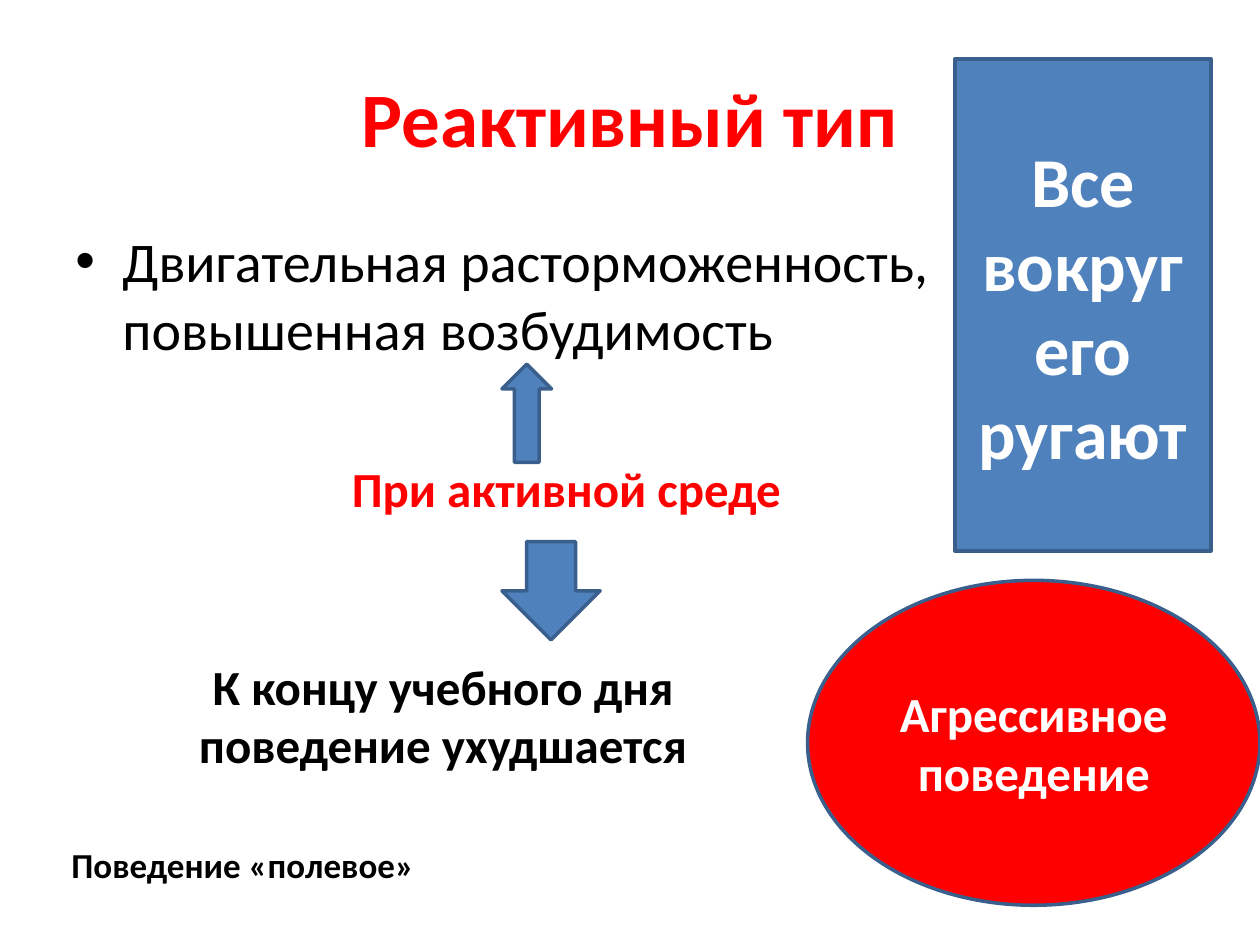
from pptx import Presentation
from pptx import util as u
from pptx.dml.color import RGBColor
from pptx.enum import shapes, text
from pptx.oxml.ns import qn
from lxml import etree

KIND = shapes.MSO_SHAPE
MID = text.MSO_ANCHOR.MIDDLE
TOP = text.MSO_ANCHOR.TOP
LEFT = text.PP_ALIGN.LEFT
CENTER = text.PP_ALIGN.CENTER

BLUE, EDGE, RED = "4F81BD", "3A5F8C", "FF0000"
BLACK, WHITE = "000000", "FFFFFF"


def color(code):
    return RGBColor.from_string(code)


class Page:
    """Holds the style and the current slide."""

    font = {"name": "Calibri", "bold": True}

    def __init__(self, slide):
        self.slide = slide

    def fill_text(self, shape, words, size, ink, align=CENTER, anchor=TOP, **extra):
        frame = shape.text_frame
        frame.word_wrap = True
        frame.vertical_anchor = anchor
        par = frame.paragraphs[0]
        par.alignment = align
        run = par.add_run()
        run.text = words
        style = {**self.font, "size": u.Pt(size), **extra}
        for key, value in style.items():
            setattr(run.font, key, value)
        run.font.color.rgb = color(ink)
        return par

    def label(self, box, words, size, ink=BLACK, **extra):
        shape = self.slide.shapes.add_textbox(*map(u.Cm, box))
        return self.fill_text(shape, words, size, ink, **extra)

    def bullet(self, box, words, size):
        par = self.label(box, words, size, align=LEFT, bold=False)
        props = par._p.get_or_add_pPr()
        indent = u.Cm(0.95)
        props.set("marL", str(indent))
        props.set("indent", str(-indent))
        space = etree.SubElement(props, qn("a:spcBef"))
        etree.SubElement(space, qn("a:spcPct"), val="20000")
        etree.SubElement(props, qn("a:buFont"), typeface="Arial")
        etree.SubElement(props, qn("a:buChar"), char="•")

    def block(self, kind, box, fill=BLUE, words=None, size=28):
        shape = self.slide.shapes.add_shape(kind, *map(u.Cm, box))
        shape.shadow.inherit = False
        shape.fill.solid()
        shape.fill.fore_color.rgb = color(fill)
        shape.line.color.rgb = color(EDGE)
        shape.line.width = u.Pt(2)
        if words:
            self.fill_text(shape, words, size, WHITE, anchor=MID)


def main():
    deck = Presentation()
    deck.slide_width, deck.slide_height = u.Cm(25.4), u.Cm(19.05)
    page = Page(deck.slides.add_slide(deck.slide_layouts[6]))

    # Title and main trait
    page.label((1.27, 0.76, 22.86, 3.18), "Реактивный тип", 44, RED, anchor=MID)
    page.bullet((1.27, 4.45, 22.86, 12.57),
                "Двигательная расторможенность, повышенная возбудимость", 32)

    # Setting, with an arrow to each outcome
    page.block(KIND.UP_ARROW, (10.12, 7.34, 1, 1.98))
    page.label((3.58, 9.12, 15.67, 1.45), "При активной среде", 28, RED)
    page.block(KIND.DOWN_ARROW, (10.12, 10.92, 1.98, 1.98))
    page.label((1.98, 13.1, 13.9, 2.64),
               "К концу учебного дня поведение ухудшается", 28)

    # Reaction of others and its result
    page.block(KIND.RECTANGLE, (19.25, 1.19, 5.16, 9.92),
               words="Все вокруг его ругают", size=40)
    page.block(KIND.OVAL, (16.28, 11.7, 9.12, 6.55), RED,
               words="Агрессивное поведение")

    # Closing remark
    page.label((1.19, 16.87, 7.54, 1.12), "Поведение «полевое»", 20, align=LEFT)

    deck.save("out.pptx")


if __name__ == "__main__":
    main()
